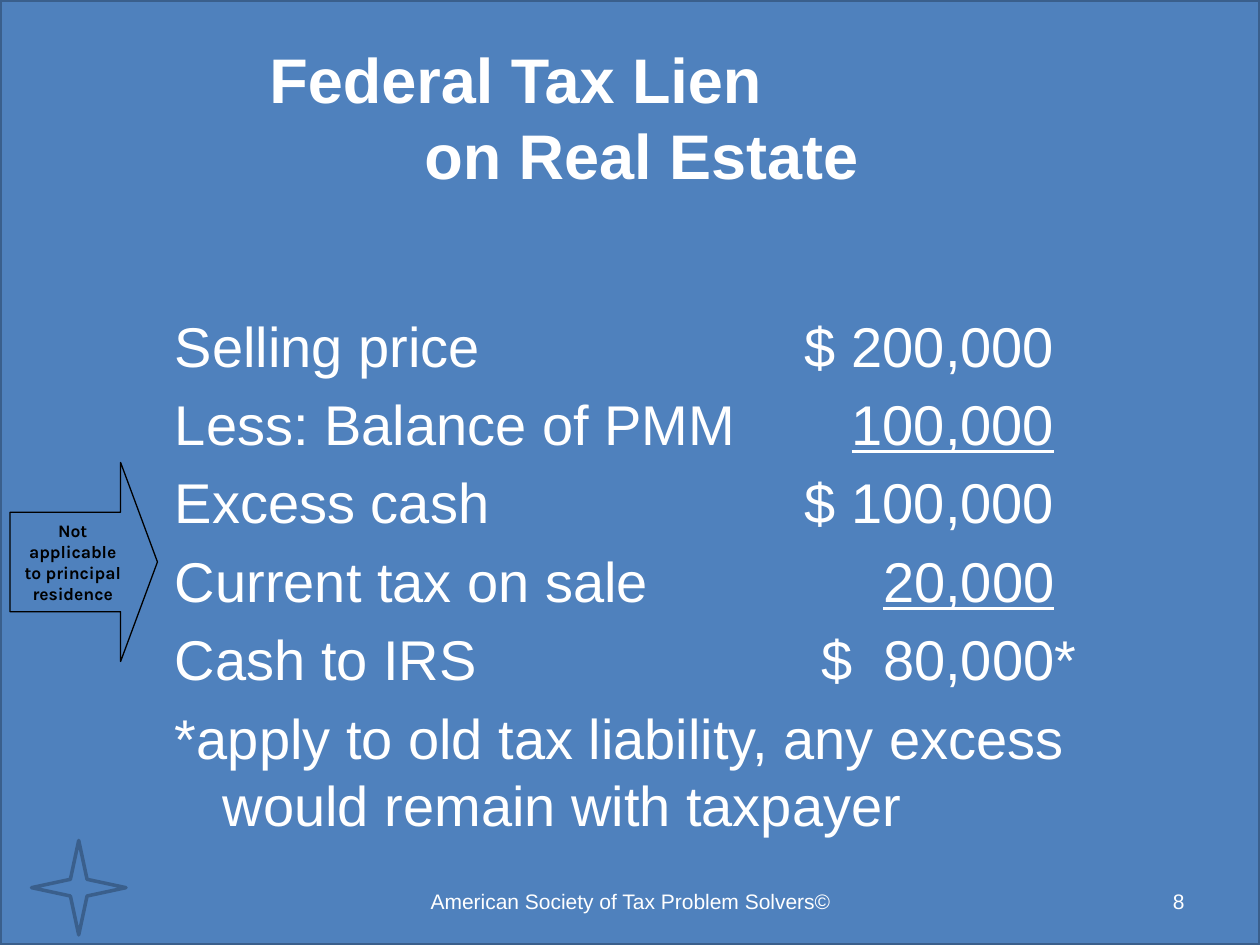
from dataclasses import dataclass

from lxml import etree
from pptx import Presentation
from pptx import util as u
from pptx.dml.color import RGBColor
from pptx.enum import shapes, text
from pptx.oxml.ns import qn


@dataclass(frozen=True)
class Theme:
    """Colours, fonts and type sizes of the slide."""
    blue: str = "4F81BD"
    outline: str = "3A5F8C"
    white: str = "FFFFFF"
    black: str = "000000"
    font: str = "Arial"
    note_font: str = "Karla"
    title: int = 36
    body: int = 32
    footer: int = 12
    note: int = 10
    leading: float = 1.2


@dataclass(frozen=True)
class Box:
    """An area in grid units, ten to the inch."""
    left: float
    top: float
    width: float
    height: float

    def inner(self, left, top, width, height):
        """Return an inner box given as shares of this one."""
        return Box(self.left + left * self.width, self.top + top * self.height,
                   width * self.width, height * self.height)

    def lengths(self):
        """Return left, top, width and height for python-pptx."""
        return [grid(n) for n in (self.left, self.top, self.width, self.height)]


THEME = Theme()
COLUMNS, ROWS = 100, 75
CENTER, RIGHT = text.PP_ALIGN.CENTER, text.PP_ALIGN.RIGHT


def grid(units):
    """Turn grid units into a length."""
    return u.Inches(units / 10)


def add_figure(parent, kind, box, line_color, line_width):
    """Add a blue preset shape with an outline."""
    shape = parent.add_shape(kind, *box.lengths())
    shape.shadow.inherit = False
    shape.fill.solid()
    shape.fill.fore_color.rgb = RGBColor.from_string(THEME.blue)
    shape.line.color.rgb = RGBColor.from_string(line_color)
    shape.line.width = u.Pt(line_width)
    return shape


def add_text(parent, box, lines, size, color=THEME.white, font=THEME.font,
             bold=None, align=None, anchor=text.MSO_ANCHOR.MIDDLE):
    """Add a wrapped text box with one paragraph per line."""
    frame = parent.add_textbox(*box.lengths()).text_frame
    frame.word_wrap = True
    frame.vertical_anchor = anchor
    frame.text = "\n".join(lines)
    for paragraph in frame.paragraphs:
        paragraph.alignment = align
        for run in paragraph.runs:
            run.font.name, run.font.size, run.font.bold = font, u.Pt(size), bold
            run.font.color.rgb = RGBColor.from_string(color)
    return frame


def set_indent(paragraph, margin, first):
    """Set the left margin and the first-line indent in grid units."""
    properties = paragraph._p.get_or_add_pPr()
    properties.set("marL", str(grid(margin)))
    properties.set("indent", str(grid(first)))


def set_tabs(paragraph, stops):
    """Give a paragraph left tab stops in grid units."""
    tabs = etree.SubElement(paragraph._p.get_or_add_pPr(), qn("a:tabLst"))
    for stop in stops:
        etree.SubElement(tabs, qn("a:tab"), pos=str(grid(stop)), algn="l")


def add_title(slide, box):
    """Add the title with its stepped second line."""
    frame = add_text(slide.shapes, box, ["Federal Tax Lien\von Real Estate"],
                     THEME.title, bold=True)
    paragraph = frame.paragraphs[0]
    set_indent(paragraph, 27.7, -12.3)
    paragraph.line_spacing = u.Pt(THEME.title * THEME.leading)


def add_calculation(slide, box):
    """Add the sale calculation and its footnote."""
    rows = [
        ("Selling price\t", "$ 200,000", [50], False),
        ("Less: Balance of PMM\t", "100,000", [53.7], True),
        ("Excess cash\t", "$ 100,000", [50], False),
        ("Current tax on sale\t", "20,000", [56.2], True),
        ("Cash to IRS\t", "$\t80,000*", [51.3, 56.2], False),
    ]
    footnote = "*apply to old tax liability, any excess would remain with taxpayer"
    frame = add_text(slide.shapes, box, [row[0] for row in rows] + [footnote],
                     THEME.body, anchor=text.MSO_ANCHOR.TOP)
    for index, paragraph in enumerate(frame.paragraphs):
        paragraph.line_spacing = u.Pt(THEME.body * THEME.leading)
        paragraph.space_before = u.Pt(THEME.body * 0.2 if index else 0)
    for paragraph, (_, amount, stops, underlined) in zip(frame.paragraphs, rows):
        set_tabs(paragraph, stops)
        run = paragraph.add_run()
        run.text = amount
        run.font.name, run.font.size = THEME.font, u.Pt(THEME.body)
        run.font.color.rgb = RGBColor.from_string(THEME.white)
        run.font.underline = underlined
    set_indent(frame.paragraphs[-1], 3.8, -3.8)


def add_arrow_note(slide, box):
    """Add the arrow with its note as one group."""
    group = slide.shapes.add_group_shape().shapes
    arrow = add_figure(group, shapes.MSO_SHAPE.RIGHT_ARROW, box, THEME.black, 0.75)
    arrow.adjustments[0], arrow.adjustments[1] = 0.5, 0.25
    add_text(group, box.inner(0, 0.26, 0.85, 0.49),
             ["Not applicable to principal residence"], THEME.note, THEME.black,
             THEME.note_font, True, CENTER, text.MSO_ANCHOR.TOP)


def add_footer(slide, box):
    """Add the society name and the slide number."""
    add_text(slide.shapes, box.inner(0, 0, 0.6, 1),
             ["American Society of Tax Problem Solvers©"], THEME.footer, align=CENTER)
    add_text(slide.shapes, box.inner(0.64, 0, 0.36, 1), ["8"], THEME.footer, align=RIGHT)


def main():
    """Build and save the slide."""
    presentation = Presentation()
    presentation.slide_width, presentation.slide_height = grid(COLUMNS), grid(ROWS)
    slide = presentation.slides.add_slide(presentation.slide_layouts[6])
    add_figure(slide.shapes, shapes.MSO_SHAPE.RECTANGLE,
               Box(0, 0, COLUMNS, ROWS), THEME.outline, 2)
    add_title(slide, Box(5, 3, 71.7, 12.5))
    add_calculation(slide, Box(12.9, 24.2, 76.2, 42.9))
    add_footer(slide, Box(30.8, 69.5, 64.2, 4))
    add_arrow_note(slide, Box(0.8, 36.7, 11.7, 15.8))
    add_figure(slide.shapes, shapes.MSO_SHAPE.STAR_4_POINT,
               Box(2.5, 66.7, 7.5, 7.5), THEME.outline, 2)
    presentation.save("out.pptx")


if __name__ == "__main__":
    main()
